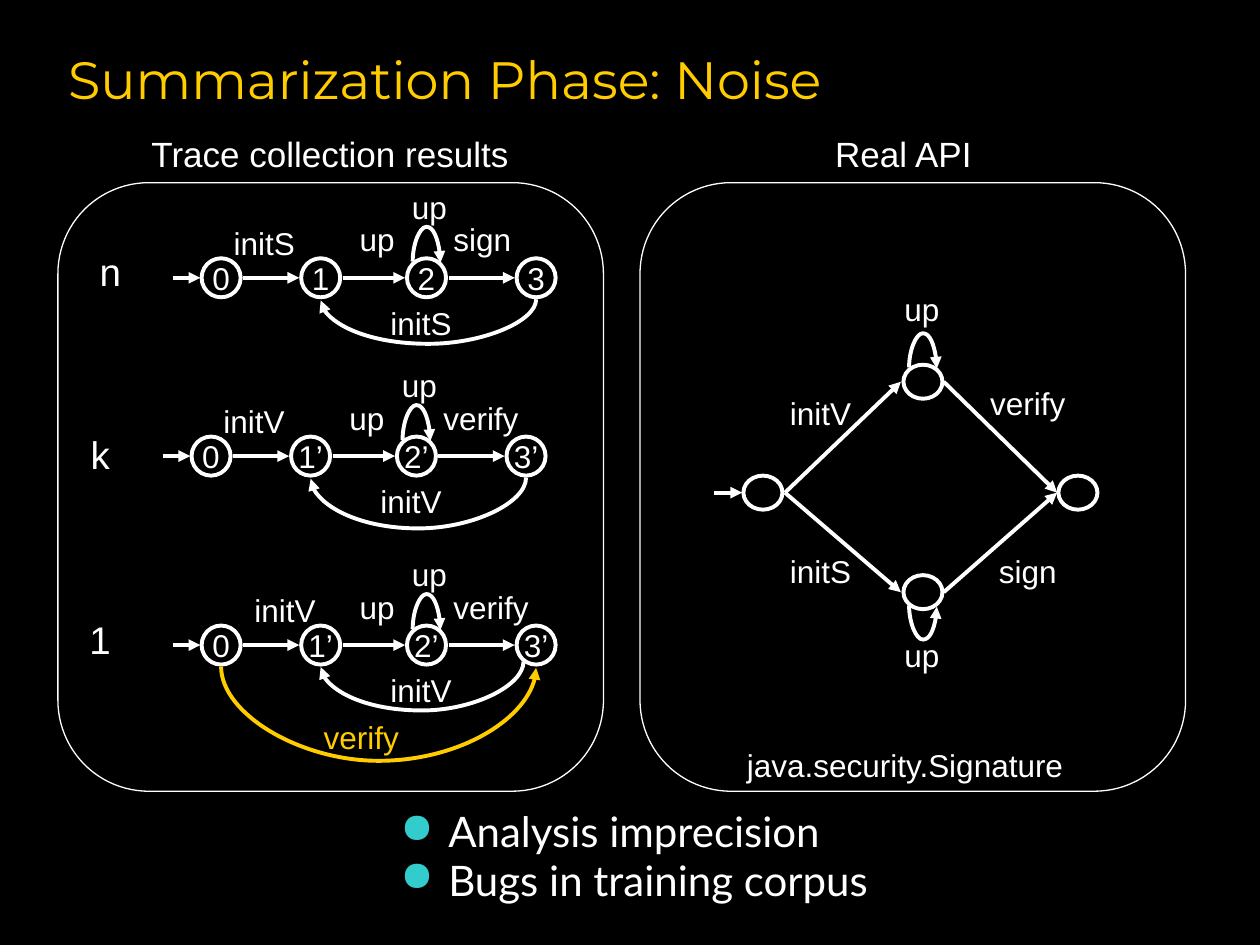
from lxml import etree
from pptx import Presentation
from pptx import util as u
from pptx.dml.color import RGBColor
from pptx.enum import shapes, text
from pptx.oxml.ns import qn

WHITE, GOLD, TEAL = "FFFFFF", "FFCC00", "33CCCC"
CELL = 0.1
WIDTHS = {"initS": 6.9, "initV": 6.9, "up": 4.8, "sign": 6.6, "verify": 8,
          "java.security.Signature": 27.3}


def rgb(value):
    return RGBColor.from_string(value)


def cells(*values):
    return [u.Inches(v * CELL) for v in values]


class Deck:
    def __init__(self):
        self.prs = Presentation()
        self.prs.slide_width, self.prs.slide_height = cells(100, 75)
        self.s = self.prs.slides.add_slide(self.prs.slide_layouts[5])
        self.s.background.fill.solid()
        self.s.background.fill.fore_color.rgb = rgb("000000")
        self.shapes = self.s.shapes

    def font(self, p, size, color=WHITE, name="Arial"):
        p.font.size, p.font.name = u.Pt(size), name
        p.font.color.rgb = rgb(color)

    def title(self, words, x, y, w, h):
        sp = self.s.shapes.title
        sp.left, sp.top, sp.width, sp.height = cells(x, y, w, h)
        tf = sp.text_frame
        tf.text, tf.vertical_anchor = words, text.MSO_ANCHOR.MIDDLE
        tf.paragraphs[0].alignment = text.PP_ALIGN.LEFT
        self.font(tf.paragraphs[0], 30, GOLD, "Montserrat")

    def bullets(self, items, x, y, w, h):
        tf = self.s.shapes.add_textbox(*cells(x, y, w, h)).text_frame
        tf.word_wrap = True
        for i, item in enumerate(items):
            p = tf.add_paragraph() if i else tf.paragraphs[0]
            p.text, p.line_spacing, p.space_before = item, 0.8, u.Pt(4.8)
            self.font(p, 24, name="Lato")
            pPr = p._p.get_or_add_pPr()
            pPr.set("marL", str(u.Inches(0.38)))
            pPr.set("indent", str(-u.Inches(0.38)))
            color = etree.Element(qn("a:buClr"))
            etree.SubElement(color, qn("a:srgbClr"), val=TEAL)
            mark = etree.Element(qn("a:buChar"), char="●")
            spacing = pPr.find(qn("a:spcBef"))
            spacing.addnext(color)
            color.addnext(mark)

    def heading(self, words, x, y, w, h, size=20):
        tf = self.shapes.add_textbox(*cells(x, y, w, h)).text_frame
        tf.word_wrap, tf.text = True, words
        tf.paragraphs[0].alignment = text.PP_ALIGN.CENTER
        self.font(tf.paragraphs[0], size)

    def label(self, words, x, y, color=WHITE):
        sp = self.shapes.add_textbox(*cells(x, y, WIDTHS[words], 4))
        tf = sp.text_frame
        tf.word_wrap, tf.text = False, words
        self.font(tf.paragraphs[0], 18, color)

    def outline(self, kind, x, y, w, h, weight):
        sp = self.shapes.add_shape(kind, *cells(x, y, w, h))
        sp.shadow.inherit = False
        sp.fill.background()
        sp.line.color.rgb, sp.line.width = rgb(WHITE), u.Pt(weight)
        return sp

    def panel(self, x):
        self.shapes = self.s.shapes.add_group_shape().shapes
        kind = shapes.MSO_SHAPE.ROUNDED_RECTANGLE
        self.outline(kind, x, 14.5, 43.3, 48.3, 0.75)

    def state(self, cx, cy, words="", h=3.1):
        kind = shapes.MSO_SHAPE.OVAL
        sp = self.outline(kind, cx - 1.55, cy - h / 2, 3.1, h, 2.25)
        if words:
            tf = sp.text_frame
            tf.word_wrap, tf.text = False, words
            tf.vertical_anchor = text.MSO_ANCHOR.MIDDLE
            tf.paragraphs[0].alignment = text.PP_ALIGN.CENTER
            self.font(tf.paragraphs[0], 18)

    def arrow(self, x1, y1, x2, y2, color=WHITE, kind=shapes.MSO_CONNECTOR.STRAIGHT):
        c = self.shapes.add_connector(kind, *cells(x1, y1, x2, y2))
        c.line.color.rgb, c.line.width = rgb(color), u.Pt(2.25)
        etree.SubElement(c.line._get_or_add_ln(), qn("a:tailEnd"), type="triangle")
        etree.SubElement(c._element.spPr, qn("a:effectLst"))
        return c

    def arc(self, x1, y1, x2, y2, depth, color=WHITE):
        c = self.arrow(x1, y1, x2, y2, color, shapes.MSO_CONNECTOR.CURVE)
        drop, span = max(y2 - y1, 0.1), abs(x2 - x1)
        c.left, c.top, c.width, c.height = cells(
            (x1 + x2 - drop) / 2, (y1 + y2 - span) / 2, drop, span)
        xfrm = c._element.spPr.find(qn("a:xfrm"))
        for flip in ("flipH", "flipV"):
            xfrm.attrib.pop(flip, None)
        xfrm.set("rot", "5400000")
        if x2 > x1:
            xfrm.set("flipV", "1")
        geom = c._element.spPr.find(qn("a:prstGeom"))
        geom.set("prst", "curvedConnector3")
        for old in list(geom):
            geom.remove(old)
        av = etree.SubElement(geom, qn("a:avLst"))
        etree.SubElement(av, qn("a:gd"), name="adj1",
                         fmla=f"val {round(depth / drop * 100000)}")

    def machine(self, x, y, names, start, end, back, start_dx, back_from, depth):
        centers = [x + dx for dx in (0, 7.9, 16.3, 25)]
        self.arrow(x - 3.85, y, x - 1.65, y)
        for cx, name in zip(centers, names):
            self.state(cx, y, name)
        for a, b in zip(centers, centers[1:]):
            self.arrow(a + 1.75, y, b - 1.7, y)
        self.arc(centers[2] - 1.1, y - 1.25, centers[2] + 1.1, y - 1.25, -2.8)
        self.arc(x + back_from[0], y + back_from[1], centers[1], y + 1.75, depth)
        for words, dx, dy in ((start, start_dx, -4.75), ("up", 10, -5.05),
                              (end, 17.45, -5.05), ("up", 14.15, -7.6),
                              (back, 12.45, 1.6)):
            self.label(words, x + dx, y + dy)


def main():
    d = Deck()
    d.title("Summarization Phase: Noise", 4.4, 2.5, 85, 7.5)
    d.bullets(["Analysis imprecision", "Bugs in training corpus"], 30.8, 64.2, 41.7, 10)

    d.panel(4.6)
    d.heading("Trace collection results", 3.3, 10, 45.8, 4.3)
    primed = ["0", "1’", "2’", "3’"]
    d.machine(17.55, 22.05, "0123", "initS", "sign", "initS", 0, (25, 1.75), 3.6)
    d.machine(16.75, 36.2, primed, "initV", "verify", "initV", 0, (25, 1.75), 4.1)
    d.machine(17.55, 51.2, primed, "initV", "verify", "initV", 1.65, (24, 1.3), 3.9)
    d.arc(17.55, 52.9, 42.55, 53, 7.6, GOLD)
    d.label("verify", 24.7, 56.5, GOLD)
    for tag, x, y in (("n", 5, 19.2), ("k", 4.2, 33.7), ("1", 4.2, 48.4)):
        d.heading(tag, x, y, 7.5, 4.7, 22)

    d.panel(50.8)
    d.heading("Real API", 59.2, 10, 25, 4.3)
    left, mid, right, axis = 60.55, 73.25, 85.55, 39.1
    d.arrow(left - 3.85, axis, left - 1.65, axis)
    for cx in (left, right):
        d.state(cx, axis, h=2.7)
    for cy, side in ((30.3, -1), (47, 1)):
        d.state(mid, cy, h=2.7)
        d.arrow(left + 1.75, axis, mid - 1.75, cy)
        d.arrow(mid + 1.65, cy, right - 1.65, axis)
        d.arc(mid - 1.1, cy + side * 1.1, mid + 1.1, cy + side * 1.1, side * 2.75)
    for words, x, y in (("initV", 61.7, 30.8), ("verify", 77.6, 30),
                        ("initS", 61.7, 43.3), ("sign", 78.3, 43.3),
                        ("up", 70.8, 22.5), ("up", 70.8, 50),
                        ("java.security.Signature", 58.3, 58.7)):
        d.label(words, x, y)
    d.prs.save("out.pptx")


if __name__ == "__main__":
    main()
